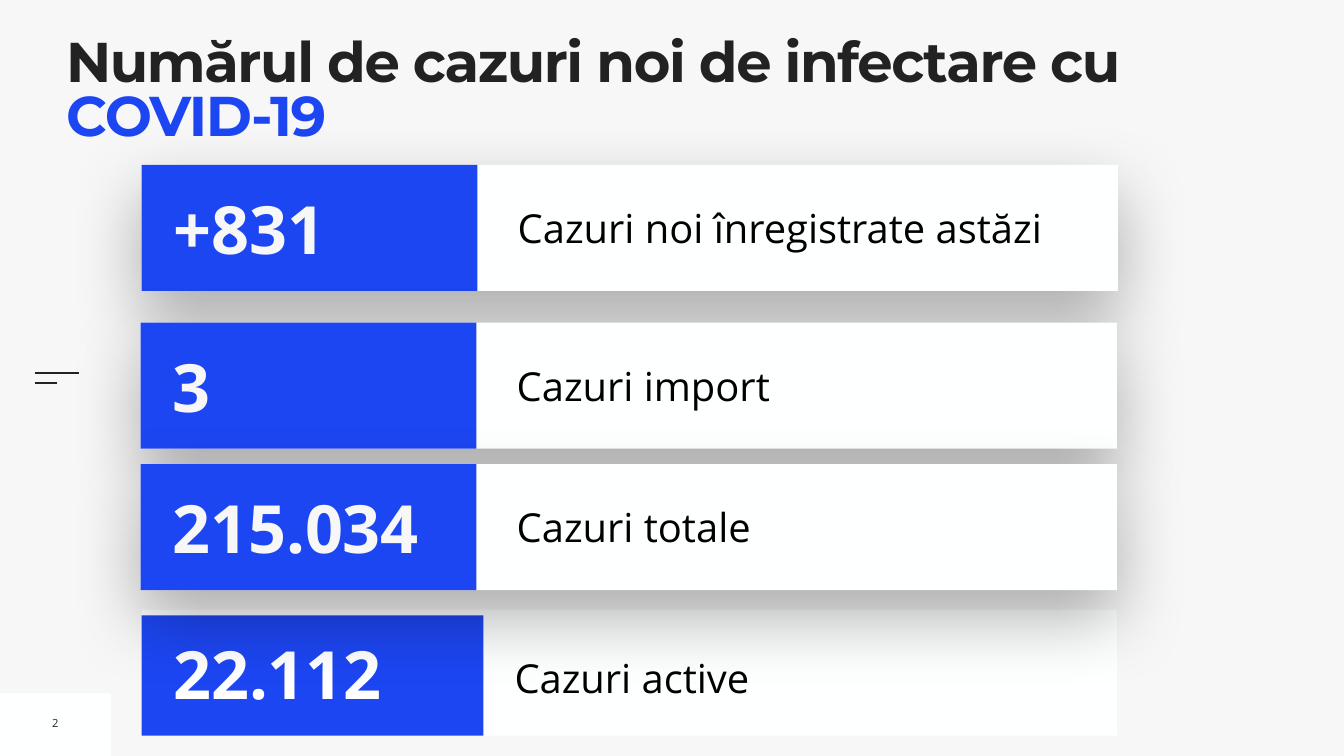
import pptx
import pptx.dml.color
import pptx.enum.shapes
import pptx.enum.text
import pptx.oxml
import pptx.oxml.ns
import pptx.util
from pptx.util import Cm

BLUE, DARK, PAPER, WHITE, BLACK = "1D46F3", "222222", "F7F7F7", "FEFFFF", "000000"
ANCHOR = pptx.enum.text.MSO_ANCHOR
ALIGN = pptx.enum.text.PP_ALIGN

SHADOW = (
    f'<a:effectLst {pptx.oxml.ns.nsdecls("a")}>'
    '<a:outerShdw blurRad="1270000" dist="508000" dir="5400000" algn="ctr" rotWithShape="0">'
    '<a:srgbClr val="000000"><a:alpha val="30000"/></a:srgbClr>'
    '</a:outerShdw></a:effectLst>'
)
NO_EFFECT = f'<a:effectLst {pptx.oxml.ns.nsdecls("a")}/>'


def color(value):
    return pptx.dml.color.RGBColor.from_string(value)


def set_font(font, size, name, value, bold=False):
    font.size = pptx.util.Pt(size)
    font.name = name
    font.bold = bold
    font.color.rgb = color(value)


def set_frame(tf, anchor, inset, wrap=True):
    tf.word_wrap = wrap
    tf.auto_size = pptx.enum.text.MSO_AUTO_SIZE.NONE
    tf.vertical_anchor = anchor
    tf.margin_left = tf.margin_right = tf.margin_top = tf.margin_bottom = Cm(inset)


def add_rect(shapes, x, y, w, h, fill, shadow=False):
    sp = shapes.add_shape(pptx.enum.shapes.MSO_SHAPE.RECTANGLE, Cm(x), Cm(y), Cm(w), Cm(h))
    sp.fill.solid()
    sp.fill.fore_color.rgb = color(fill)
    sp.line.fill.background()
    if shadow:
        sp._element.spPr.append(pptx.oxml.parse_xml(SHADOW))
    else:
        sp.shadow.inherit = False


def add_text(shapes, x, y, w, h, text, size, value, bold=False, inset=0.25, wrap=True):
    """Add a vertically centred text box and return its paragraph."""
    tf = shapes.add_textbox(Cm(x), Cm(y), Cm(w), Cm(h)).text_frame
    set_frame(tf, ANCHOR.MIDDLE, inset, wrap)
    p = tf.paragraphs[0]
    p.text = text
    set_font(p.font, size, "Open Sans", value, bold)
    return p


def add_dash(shapes, x, y, length):
    cn = shapes.add_connector(pptx.enum.shapes.MSO_CONNECTOR.STRAIGHT,
                              Cm(x), Cm(y), Cm(x + length), Cm(y))
    cn.line.color.rgb = color(DARK)
    cn.line.width = pptx.util.Pt(3)
    cn._element.spPr.append(pptx.oxml.parse_xml(NO_EFFECT))


def add_title(slide):
    title = slide.shapes.title
    title.left, title.top, title.width, title.height = Cm(3.33), Cm(1.98), Cm(60.81), Cm(4.01)
    set_frame(title.text_frame, ANCHOR.TOP, 0)
    p = title.text_frame.paragraphs[0]
    p.alignment = ALIGN.LEFT
    p.line_spacing = 0.8
    for text, value in (("Numărul de cazuri noi de infectare cu ", DARK), ("COVID-19", BLUE)):
        r = p.add_run()
        r.text = text
        set_font(r.font, 80, "Montserrat", value, True)
        r._r.get_or_add_rPr().set("spc", "-200")


def add_card(slide, x, y, value, label):
    shapes = slide.shapes.add_group_shape().shapes
    add_rect(shapes, x, y, 49.2, 6.35, WHITE, shadow=True)
    add_text(shapes, x + 18.7, y + 1.69, 29.87, 2.95, label, 57, BLACK)
    add_rect(shapes, x, y, 16.92, 6.35, BLUE)
    add_text(shapes, x + 1.35, y + 0.89, 15.32, 4.57, value, 95, PAPER, bold=True)


def add_active_card(slide):
    """Add the bottom card, flat and with its own proportions."""
    shapes = slide.shapes.add_group_shape().shapes
    add_rect(shapes, 7.14, 30.73, 49.15, 6.35, WHITE)
    p = add_text(shapes, 25.93, 32.21, 29.41, 3.18, "Cazuri active", 57, BLACK, inset=0)
    p.line_spacing = 1.3
    p.space_before = pptx.util.Pt(20)
    add_rect(shapes, 7.14, 31.01, 17.22, 6.07, BLUE)
    add_text(shapes, 8.48, 31.62, 15.32, 4.57, "22.112", 95, "FFFFFF", bold=True)


def main():
    prs = pptx.Presentation()
    prs.slide_width, prs.slide_height = Cm(67.73), Cm(38.1)
    slide = prs.slides.add_slide(prs.slide_layouts[5])
    slide.background.fill.solid()
    slide.background.fill.fore_color.rgb = color(PAPER)

    add_rect(slide.shapes, 0, 34.95, 5.59, 3.15, WHITE)
    add_dash(slide.shapes, 1.75, 18.82, 2.24)
    add_dash(slide.shapes, 1.75, 19.28, 1.12)
    number = add_text(slide.shapes, 2.36, 35.79, 0.86, 1.3, "2", 16, DARK, wrap=False)
    number.alignment = ALIGN.CENTER

    add_title(slide)
    add_active_card(slide)
    for x, y, value, label in (
        (7.14, 8.31, "+831", "Cazuri noi înregistrate astăzi"),
        (7.09, 16.26, "3", "Cazuri import"),
        (7.09, 23.39, "215.034", "Cazuri totale"),
    ):
        add_card(slide, x, y, value, label)
    prs.save("out.pptx")


if __name__ == "__main__":
    main()
